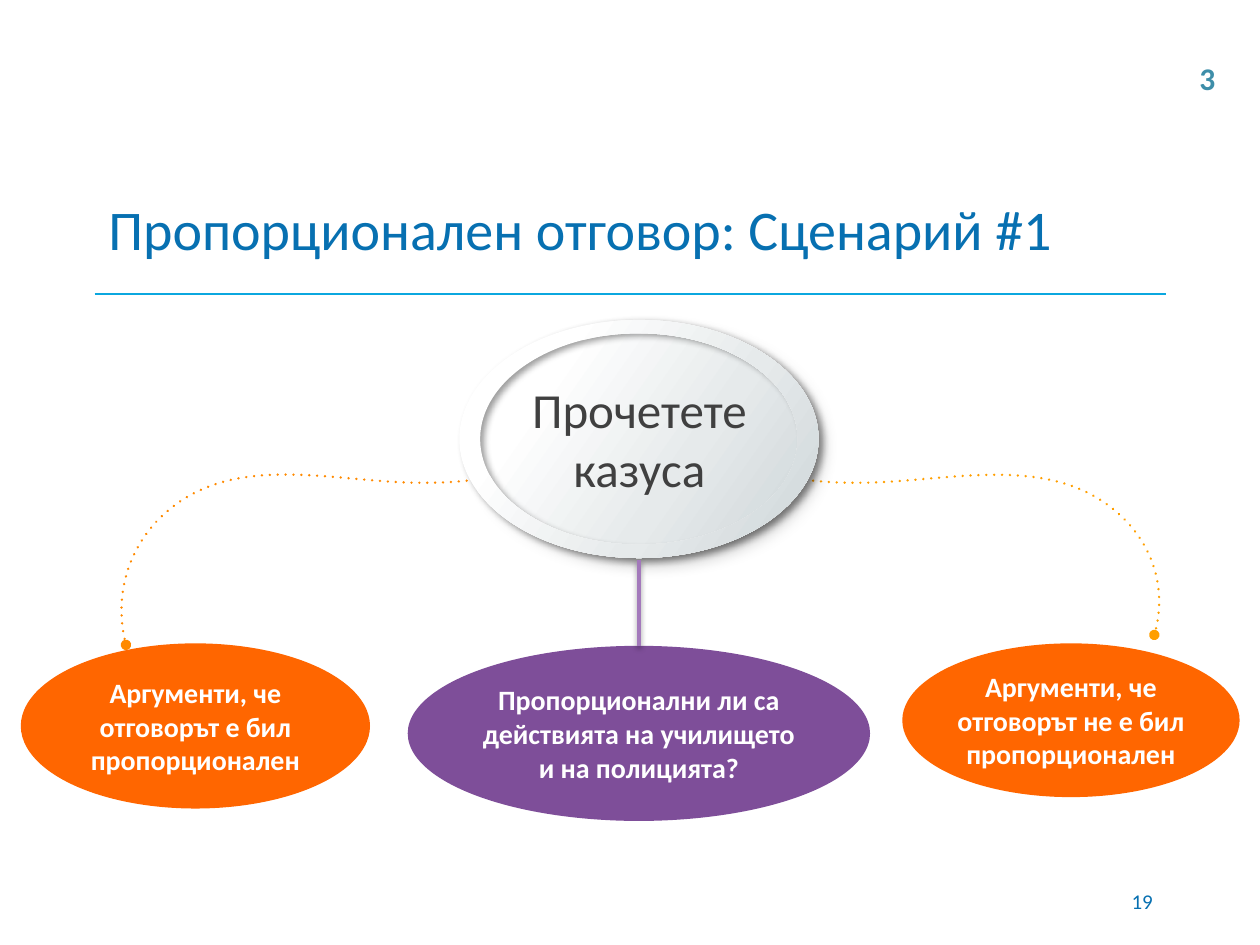
from pptx import Presentation
from pptx.dml.color import RGBColor
from pptx.enum.shapes import MSO_CONNECTOR, MSO_SHAPE
from pptx.enum.text import MSO_ANCHOR, PP_ALIGN
from pptx.oxml import parse_xml
from pptx.oxml.ns import nsdecls, qn
from pptx.util import Cm, Pt

BLUE, ORANGE, PURPLE = "0770B1", "FF6600", "7E4E99"
SILVER = [(23, "FFFFFF"), (63, "E6EAEB"), (100, "CDD5D8")]


def rgb(color):
    return RGBColor.from_string(color)


def set_text(s, text, size=16, color="FFFFFF", bold=False,
             align=PP_ALIGN.LEFT, anchor=MSO_ANCHOR.MIDDLE, wrap=True, inset=None):
    tf = s.text_frame
    tf.word_wrap, tf.vertical_anchor = wrap, anchor
    if inset is not None:
        tf.margin_left = tf.margin_right = Cm(inset)
        tf.margin_top = tf.margin_bottom = Cm(inset)
    p = tf.paragraphs[0]
    p.alignment = align
    r = p.add_run()
    r.text = text
    r.font.name, r.font.size, r.font.bold = "Calibri", Pt(size), bold
    r.font.color.rgb = rgb(color)


def add_label(sp, box, text, **fmt):
    s = sp.add_textbox(*map(Cm, box))
    set_text(s, text, **fmt)


def add_ellipse(sp, box, text, fill=None, **fmt):
    s = sp.add_shape(MSO_SHAPE.OVAL, *map(Cm, box))
    s.shadow.inherit = False
    s.line.fill.background()
    if fill:
        s.fill.solid()
        s.fill.fore_color.rgb = rgb(fill)
    set_text(s, text, align=PP_ALIGN.CENTER, inset=0.1, **fmt)
    return s


def add_line(sp, start, end, color, width):
    s = sp.add_connector(MSO_CONNECTOR.STRAIGHT, *map(Cm, start + end))
    s.line.color.rgb = rgb(color)
    s.line.width = Pt(width)
    s._element.spPr.append(parse_xml(f'<a:effectLst {nsdecls("a")}/>'))
    return s


def set_shadow(s, blur, dist, angle):
    s._element.spPr.find(qn("a:effectLst")).append(parse_xml(
        f'<a:outerShdw {nsdecls("a")} blurRad="{Pt(blur)}" dist="{Pt(dist)}" '
        f'dir="{angle * 60000}" rotWithShape="0"><a:srgbClr val="000000">'
        '<a:alpha val="38000"/></a:srgbClr></a:outerShdw>'))


def set_silver(s):
    stops = "".join(f'<a:gs pos="{pos * 1000}"><a:srgbClr val="{c}"/></a:gs>'
                    for pos, c in SILVER)
    s.fill.background()
    spPr = s._element.spPr
    spPr.replace(spPr.find(qn("a:noFill")), parse_xml(
        f'<a:gradFill {nsdecls("a")} rotWithShape="1"><a:gsLst>{stops}</a:gsLst>'
        f'<a:lin ang="{35 * 60000}" scaled="0"/></a:gradFill>'))


def add_curves(sp, paths, close):
    """Freeform of cubic curves: a start, then two controls and an end for each."""
    paths = [[(Cm(x), Cm(y)) for x, y in path] for path in paths]
    builder = sp.build_freeform(*paths[0][0])
    for i, path in enumerate(paths):
        if i:
            builder.move_to(*path[0])
        builder.add_line_segments(path[1:], close=close)
    s = builder.convert_to_shape()
    s.shadow.inherit = False
    # Join every three line points into one curve
    lines = list(s._element.iter(qn("a:lnTo")))
    for i in range(0, len(lines), 3):
        curve = parse_xml(f'<a:cubicBezTo {nsdecls("a")}/>')
        lines[i].addprevious(curve)
        for line in lines[i:i + 3]:
            curve.append(line[0])
            line.getparent().remove(line)
    return s


def add_dotted_arc(sp, points, color):
    s = add_curves(sp, [points], close=False)
    s.fill.background()
    s.line.color.rgb = rgb(color)
    s.line.width = Pt(1.5)
    ln = s.line._get_or_add_ln()
    ln.set("cap", "rnd")
    ln.append(parse_xml(f'<a:custDash {nsdecls("a")}><a:ds d="100000" sp="200000"/>'
                        '</a:custDash>'))
    for end in ("headEnd", "tailEnd"):
        ln.append(parse_xml(f'<a:{end} {nsdecls("a")} type="oval"/>'))


def ellipse_curves(cx, cy, rx, ry):
    k = 0.5523  # control distance for a quarter of an ellipse
    unit = [(1, 0), (1, k), (k, 1), (0, 1), (-k, 1), (-1, k), (-1, 0),
            (-1, -k), (-k, -1), (0, -1), (k, -1), (1, -k), (1, 0)]
    return [(cx + rx * x, cy + ry * y) for x, y in unit]


def add_dial(sp, text):
    """Silver disc with a raised rim."""
    group = sp.add_group_shape().shapes
    disc = add_ellipse(group, (9.5, 6.57, 6.78, 4.55), text, size=28, color="404040")
    cx, cy = 12.88, 8.85
    rim = add_curves(group, [ellipse_curves(cx, cy, 3.62, 2.4),
                             ellipse_curves(cx, cy, 3.2, -2.13)], close=True)
    rim.line.fill.background()
    for s, blur, dist in ((disc, 12, 7.1), (rim, 4, 2.8)):
        set_silver(s)
        set_shadow(s, blur, dist, 39)


def main():
    prs = Presentation()
    prs.slide_width, prs.slide_height = Cm(25.4), Cm(19.05)
    slide = prs.slides.add_slide(prs.slide_layouts[5])
    sp = slide.shapes

    # Title, rule and page number
    title = sp.title
    title.left, title.top, title.width, title.height = map(Cm, (1.93, 3.18, 21.59, 2.84))
    set_text(title, "Пропорционален отговор: Сценарий #1", size=32, color=BLUE)
    add_line(sp, (1.91, 5.93), (23.5, 5.93), "0BA7DF", 1)
    add_label(sp, (18.21, 17.65, 5.28, 1.02), "19", size=12, color=BLUE,
              align=PP_ALIGN.RIGHT)

    # Arguments on both sides, each with its dotted arc
    add_ellipse(sp, (0.42, 12.97, 7.04, 3.33),
                "Аргументи, че отговорът е бил пропорционален", ORANGE, bold=True)
    add_dotted_arc(sp, [(10.59, 9.47), (9.83, 9.68), (9.07, 9.75), (8.28, 9.73),
                        (6.5, 9.68), (4.5, 9.09), (3.15, 10.52),
                        (2.54, 11.18), (2.31, 12.12), (2.54, 13)], "FF8A00")
    add_ellipse(sp, (18.19, 12.97, 6.8, 3.1),
                "Аргументи, че отговорът не е бил пропорционален", ORANGE, bold=True)
    add_dotted_arc(sp, [(15.21, 9.47), (15.98, 9.68), (16.74, 9.75), (17.53, 9.73),
                        (19.3, 9.68), (21.31, 9.12), (22.66, 10.46),
                        (23.27, 11.07), (23.52, 11.96), (23.27, 12.8)], "FF9F00")

    # Central question and the dial above it
    question = add_ellipse(sp, (8.22, 13.02, 9.32, 3.53),
                           "Пропорционални ли са действията на училището и на полицията?",
                           PURPLE, bold=True)
    add_dial(sp, "Прочетете казуса")
    stem = add_line(sp, (12.88, 11.28), (12.88, 13.02), "A379BB", 2)
    stem.end_connect(question, 0)
    set_shadow(stem, 3.1, 1.6, 90)

    # Section number
    add_label(sp, (23.93, 1.07, 0.84, 1.02), "3", size=18, color="3E8EA9", bold=True,
              anchor=MSO_ANCHOR.TOP, wrap=False)

    prs.save("out.pptx")


if __name__ == "__main__":
    main()
